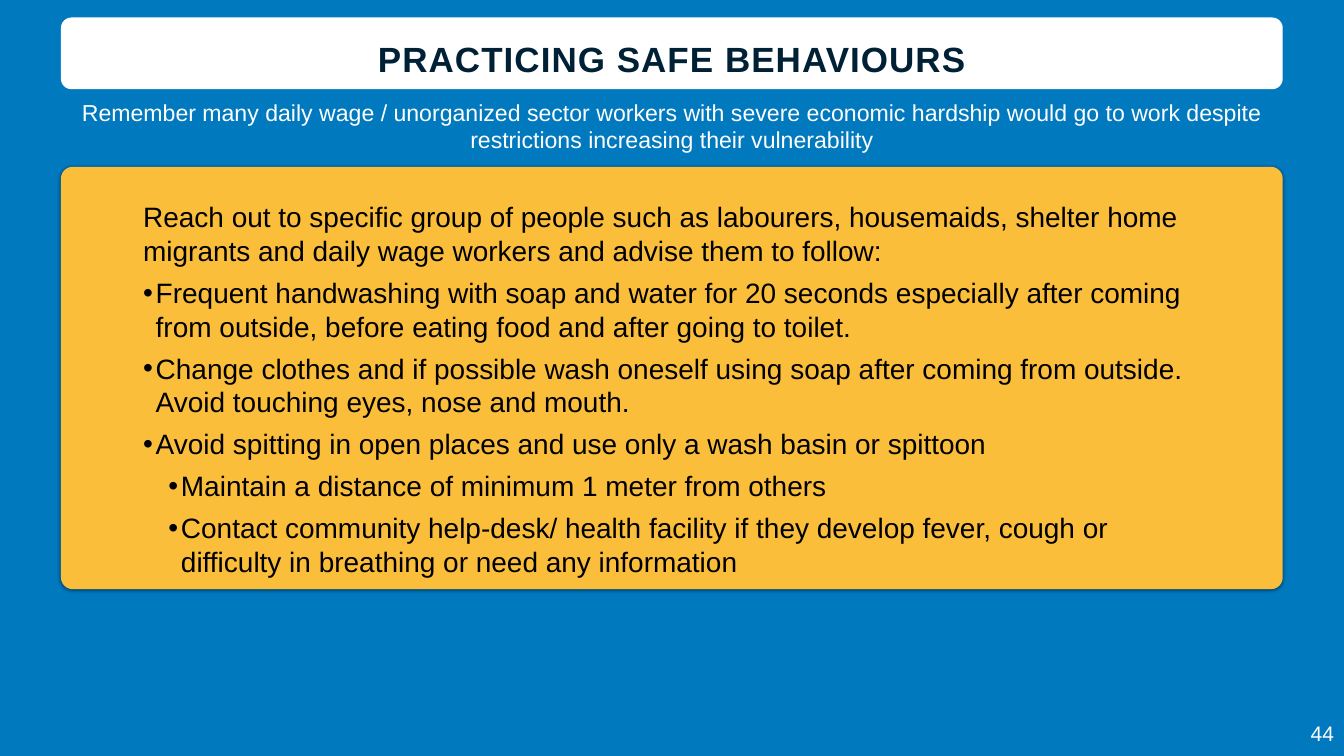
from dataclasses import dataclass

from lxml.etree import SubElement as Sub
from pptx import Presentation
from pptx.dml.color import RGBColor as Rgb
from pptx.enum.shapes import MSO_SHAPE as Kind
from pptx.enum.text import MSO_ANCHOR as Anchor, PP_ALIGN as Align
from pptx.oxml.ns import qn
from pptx.util import Pt

HUES = {"blue": "0079BF", "white": "FFFFFF", "navy": "002135",
        "gold": "FABE3B", "black": "000000"}
FONT = "Arial"
STEP = 18  # bullet hang


@dataclass
class Box:
    left: float
    top: float
    width: float
    height: float

    def spot(self) -> list:
        return [Pt(n) for n in (self.left, self.top, self.width, self.height)]


@dataclass
class Style:
    size: float
    hue: str
    bold: bool = False
    align: Align = Align.CENTER
    lead: float = 1.0
    gap: float = 0
    track: float = 0


@dataclass
class Line:
    text: str
    dent: float = 0  # left edge of the words; 0 means no bullet


def tint(fill, hue: str) -> None:
    fill.solid()
    fill.fore_color.rgb = Rgb.from_string(HUES[hue])


def panel(slide, box: Box, hue: str, curve: float):
    shape = slide.shapes.add_shape(Kind.ROUNDED_RECTANGLE, *box.spot())
    shape.adjustments[0] = curve
    shape.shadow.inherit = False
    tint(shape.fill, hue)
    shape.line.fill.background()
    return shape


def shade(shape) -> None:
    """Add a soft shadow straight below the shape."""
    effects = shape._element.spPr.find(qn("a:effectLst"))
    outer = Sub(effects, qn("a:outerShdw"), blurRad=str(Pt(5)),
                dist=str(Pt(2)), dir="5400000", rotWithShape="0")
    color = Sub(outer, qn("a:srgbClr"), val=HUES["black"])
    Sub(color, qn("a:alpha"), val="50000")


def bullet(para, dent: float) -> None:
    props = para._p.get_or_add_pPr()
    props.set("marL", str(Pt(dent)))
    props.set("indent", str(Pt(-STEP)))
    Sub(props, qn("a:buFont"), typeface=FONT)
    Sub(props, qn("a:buChar"), char="•")


def write(slide, box: Box, lines: list[Line], style: Style, pad: float = 3.6,
          anchor: Anchor = Anchor.TOP, wrap: bool = True) -> None:
    frame = slide.shapes.add_textbox(*box.spot()).text_frame
    frame.word_wrap = wrap
    frame.vertical_anchor = anchor
    frame.margin_left = frame.margin_right = Pt(pad)
    frame.margin_top = frame.margin_bottom = Pt(pad)
    for i, line in enumerate(lines):
        para = frame.add_paragraph() if i else frame.paragraphs[0]
        para.alignment = style.align
        para.line_spacing = style.lead
        para.space_before = Pt(style.gap)
        if line.dent:
            bullet(para, line.dent)
        run = para.add_run()
        run.text = line.text
        if style.track:
            run._r.get_or_add_rPr().set("spc", str(int(style.track * 100)))
        font = para.font
        font.name, font.size, font.bold = FONT, Pt(style.size), style.bold
        tint(font.fill, style.hue)


TITLE = [Line("PRACTICING SAFE BEHAVIOURS")]
NOTE = [
    Line("Remember many daily wage / unorganized sector workers with severe "
         "economic hardship would go to work despite"),
    Line("restrictions increasing their vulnerability"),
]
ADVICE = [
    Line("Reach out to specific group of people such as labourers, housemaids, "
         "shelter home migrants and daily wage workers and advise them to follow:"),
    Line("Frequent handwashing with soap and water for 20 seconds especially "
         "after coming from outside, before eating food and after going to "
         "toilet.", STEP),
    Line("Change clothes and if possible wash oneself using soap after coming "
         "from outside. Avoid touching eyes, nose and mouth.", STEP),
    Line("Avoid spitting in open places and use only a wash basin or spittoon",
         STEP),
    Line("Maintain a distance of minimum 1 meter from others", 3 * STEP),
    Line("Contact community help-desk/ health facility if they develop fever, "
         "cough or difficulty in breathing or need any information", 3 * STEP),
]


def main() -> None:
    deck = Presentation()
    deck.slide_width, deck.slide_height = Pt(1920), Pt(1080)
    slide = deck.slides.add_slide(deck.slide_layouts[6])
    tint(slide.background.fill, "blue")

    # Page number
    write(slide, Box(1867.7, 1026.7, 42.5, 41), [Line("44")],
          Style(30, "white"), 4, Anchor.MIDDLE, False)

    # Title bar
    panel(slide, Box(87, 25, 1745.5, 102.5), "white", 0.147)
    write(slide, Box(157, 44.6, 1606, 63.4), TITLE,
          Style(50, "navy", bold=True, lead=1.1, track=1.5))

    # Reminder below the title
    write(slide, Box(112.3, 138.2, 1695, 82.8), NOTE,
          Style(33, "white"), 4, Anchor.MIDDLE, False)

    # Advice card
    shade(panel(slide, Box(87, 238.3, 1745.5, 603.4), "gold", 0.028))
    write(slide, Box(200.9, 282.2, 1518.5, 516.2), ADVICE,
          Style(40, "black", align=Align.LEFT, gap=12))

    deck.save("out.pptx")


if __name__ == "__main__":
    main()
